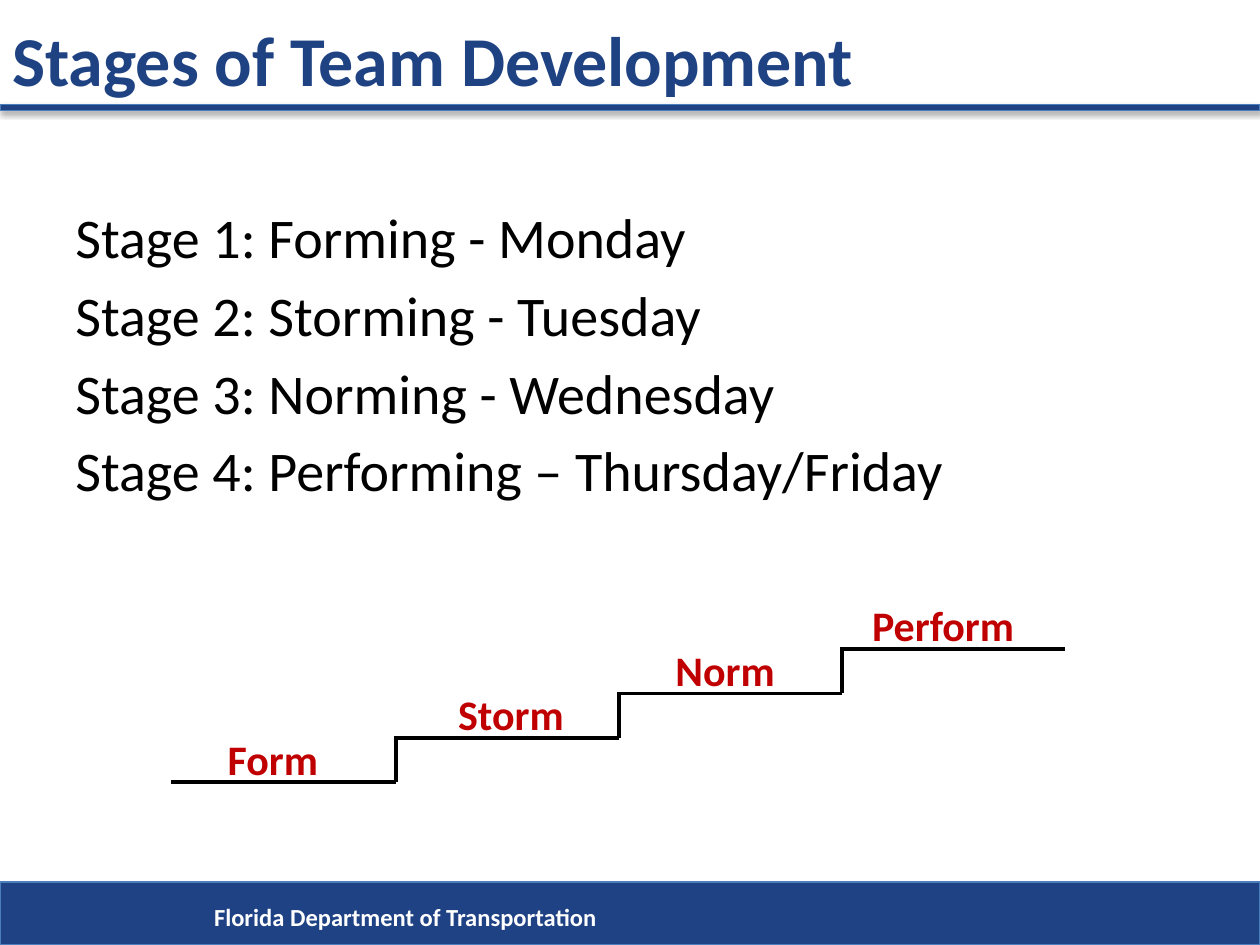
from lxml import etree
from pptx import Presentation
from pptx.dml.color import RGBColor
from pptx.enum.shapes import MSO_CONNECTOR, MSO_SHAPE
from pptx.enum.text import MSO_ANCHOR, PP_ALIGN
from pptx.oxml.ns import qn
from pptx.util import Inches, Pt

LINE, RECT = MSO_CONNECTOR.STRAIGHT, MSO_SHAPE.RECTANGLE
LEFT, MID = PP_ALIGN.LEFT, PP_ALIGN.CENTER
TOP, CENTER = MSO_ANCHOR.TOP, MSO_ANCHOR.MIDDLE
FONT = "Calibri"
INK = {"navy": "1F4284", "title": "1F4283", "edge": "4B7EBC",
       "red": "C00000", "black": "000000", "white": "FFFFFF"}

# Content
TITLE = "Stages of Team Development"
FOOTER = "Florida Department of Transportation"
STAGES = ["Stage 1: Forming - Monday", "Stage 2: Storming - Tuesday",
          "Stage 3: Norming - Wednesday",
          "Stage 4: Performing – Thursday/Friday"]
STEPS = [("Form", 1.36), ("Storm", 3.25), ("Norm", 4.95), ("Perform", 6.68)]
BARS = [(7, 0.5), (0.83, 0.05)]  # top, height

# Staircase: first tread, then equal steps up to the right
LEFT_X, BASE_Y = 1.36, 6.21
RUN, RISE, LAP = 1.77, 0.353, 0.01

prs = Presentation()
prs.slide_width, prs.slide_height = Inches(10), Inches(7.5)
slide = prs.slides.add_slide(prs.slide_layouts[6])
shapes = slide.shapes


def color(name):
    return RGBColor.from_string(INK[name])


def add_text(lines, x, y, w, h, size=24, ink="black", bold=False,
             align=LEFT, anchor=TOP, gap=0):
    frame = shapes.add_textbox(*map(Inches, (x, y, w, h))).text_frame
    frame.word_wrap = True
    frame.vertical_anchor = anchor
    for i, line in enumerate(lines):
        para = frame.add_paragraph() if i else frame.paragraphs[0]
        para.alignment = align
        if i:
            para.space_before = Pt(gap)
        run = para.add_run()
        run.text = line
        font = run.font
        font.name, font.size, font.bold = FONT, Pt(size), bold
        font.color.rgb = color(ink)


def add_bar(y, h):
    bar = shapes.add_shape(RECT, 0, Inches(y), prs.slide_width, Inches(h))
    bar.fill.solid()
    bar.fill.fore_color.rgb = color("navy")
    bar.line.color.rgb = color("edge")
    bar.line.width = Pt(0.75)
    bar.shadow.inherit = False
    # Soft shadow straight down
    effects = bar._element.spPr.find(qn("a:effectLst"))
    shade = etree.SubElement(effects, qn("a:outerShdw"), blurRad=str(Pt(3.1)),
                             dist=str(Pt(1.8)), dir="5400000", rotWithShape="0")
    tint = etree.SubElement(shade, qn("a:srgbClr"), val=INK["black"])
    etree.SubElement(tint, qn("a:alpha"), val="35000")


def add_line(x1, y1, x2, y2):
    line = shapes.add_connector(LINE, *map(Inches, (x1, y1, x2, y2)))
    line.line.color.rgb = color("black")
    line.line.width = Pt(2.25)
    etree.SubElement(line._element.spPr, qn("a:effectLst"))


# Bars, footer, list and title
for top, height in BARS:
    add_bar(top, height)
add_text([FOOTER], 1.6, 7.11, 7.98, 0.34, size=14, ink="white", bold=True)
add_text(STAGES, 0.5, 1.56, 7.43, 2.76, size=32, gap=6)
add_text([TITLE], 0, 0.01, 9, 0.91, size=40, ink="title", bold=True,
         anchor=CENTER)

# Stairs with their labels
for i, (label, x) in enumerate(STEPS):
    start, y = LEFT_X + i * RUN, BASE_Y - i * RISE
    add_line(start, y, start + RUN + LAP, y)
    if i:
        add_line(start + LAP, y + RISE, start + LAP, y)
    add_text([label], x, y - 0.44, 1.61, 0.5, ink="red", bold=True, align=MID)

prs.save("out.pptx")
